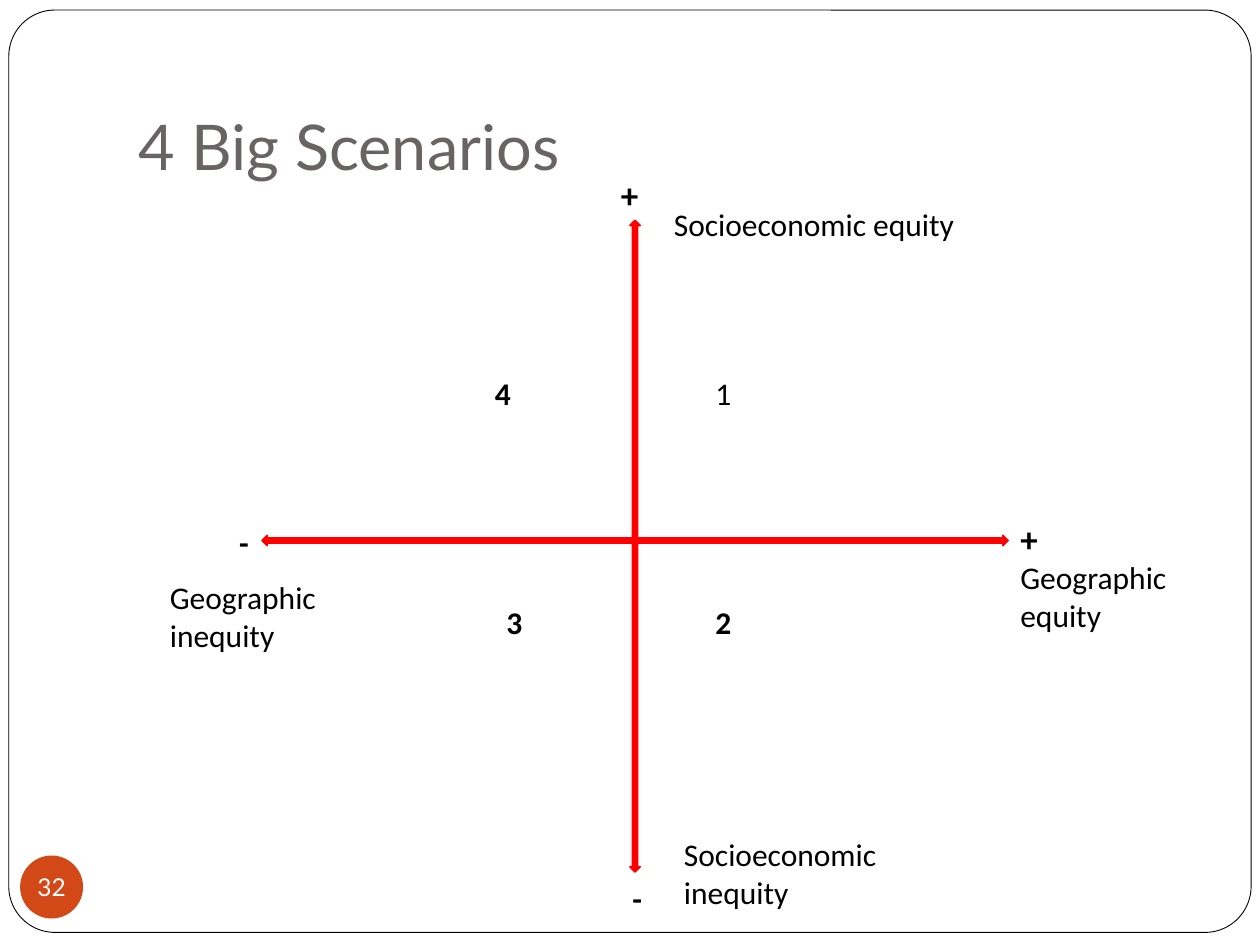
from pptx import Presentation
from pptx.dml.color import RGBColor
from pptx.enum.shapes import MSO_SHAPE
from pptx.enum.text import MSO_ANCHOR, PP_ALIGN
from pptx.util import Inches, Pt

WHITE = RGBColor(0xFF, 0xFF, 0xFF)
BLACK = RGBColor(0x00, 0x00, 0x00)
RED = RGBColor(0xFF, 0x00, 0x00)
ORANGE = RGBColor(0xD3, 0x48, 0x17)
GREY = RGBColor(0x69, 0x64, 0x64)

presentation = Presentation()
presentation.slide_width = Inches(10)
presentation.slide_height = Inches(7.5)
slide = presentation.slides.add_slide(presentation.slide_layouts[6])


def add_shape(kind, box, fill, line=None, line_width=1):
    shape = slide.shapes.add_shape(kind, *[Inches(value) for value in box])
    shape.shadow.inherit = False
    shape.fill.solid()
    shape.fill.fore_color.rgb = fill
    if line is None:
        shape.line.fill.background()
    else:
        shape.line.color.rgb = line
        shape.line.width = Pt(line_width)
    return shape


def write(shape, lines, size, color=BLACK, bold=False, font="Calibri", wrap=True):
    frame = shape.text_frame
    frame.word_wrap = wrap
    for index, line in enumerate(lines):
        paragraph = frame.add_paragraph() if index else frame.paragraphs[0]
        run = paragraph.add_run()
        run.text = line
        run.font.name = font
        run.font.size = Pt(size)
        run.font.bold = bold
        run.font.color.rgb = color
    return frame


# Rounded slide frame
border = add_shape(MSO_SHAPE.ROUNDED_RECTANGLE, (0.07, 0.08, 9.86, 7.32), WHITE, BLACK, 0.5)
border.adjustments[0] = 0.05

# Title
title = slide.shapes.add_textbox(Inches(1), Inches(0.3), Inches(8.5), Inches(1.25))
title_frame = write(title, ["4 Big Scenarios"], 36, GREY, font="Lato")
title_frame.vertical_anchor = MSO_ANCHOR.BOTTOM
title_frame.margin_bottom = Inches(0.1)

# Slide number badge
badge = add_shape(MSO_SHAPE.OVAL, (0.16, 6.79, 0.5, 0.5), ORANGE)
badge_frame = write(badge, ["32"], 14, WHITE, font="Lato", wrap=False)
badge_frame.vertical_anchor = MSO_ANCHOR.MIDDLE
badge_frame.margin_left = badge_frame.margin_right = 0
badge_frame.margin_top = badge_frame.margin_bottom = 0
badge_frame.paragraphs[0].alignment = PP_ALIGN.CENTER

# Axes
add_shape(MSO_SHAPE.LEFT_RIGHT_ARROW, (2.08, 4.25, 5.92, 0.08), RED, RED)
add_shape(MSO_SHAPE.UP_DOWN_ARROW, (5, 1.75, 0.08, 5.17), RED, RED)

# Axis names, axis signs and quadrant numbers: lines, box, size, bold
labels = [
    (["Socioeconomic equity"], (5.25, 1.58, 2.5, 0.71), 18, False),
    (["Socioeconomic inequity"], (5.33, 6.58, 2.5, 0.71), 18, False),
    (["Geographic", "equity"], (8, 4.38, 2.5, 0.71), 18, False),
    (["Geographic", "inequity"], (1.25, 4.54, 2.5, 0.91), 18, False),
    (["-"], (1.8, 4.1, 0.29, 0.4), 18, True),
    (["-"], (4.92, 6.93, 0.29, 0.4), 18, True),
    (["+"], (4.83, 1.33, 0.33, 0.44), 20, True),
    (["+"], (8, 4.06, 0.33, 0.44), 20, True),
    (["1"], (5.58, 2.92, 0.75, 0.51), 18, False),
    (["4"], (3.83, 2.92, 0.75, 0.51), 18, True),
    (["2"], (5.58, 4.74, 0.75, 0.51), 18, True),
    (["3"], (3.92, 4.74, 0.75, 0.51), 18, True),
]
for lines, box, size, bold in labels:
    label = slide.shapes.add_textbox(*[Inches(value) for value in box])
    write(label, lines, size, bold=bold, wrap=lines != ["-"])

presentation.save("out.pptx")
